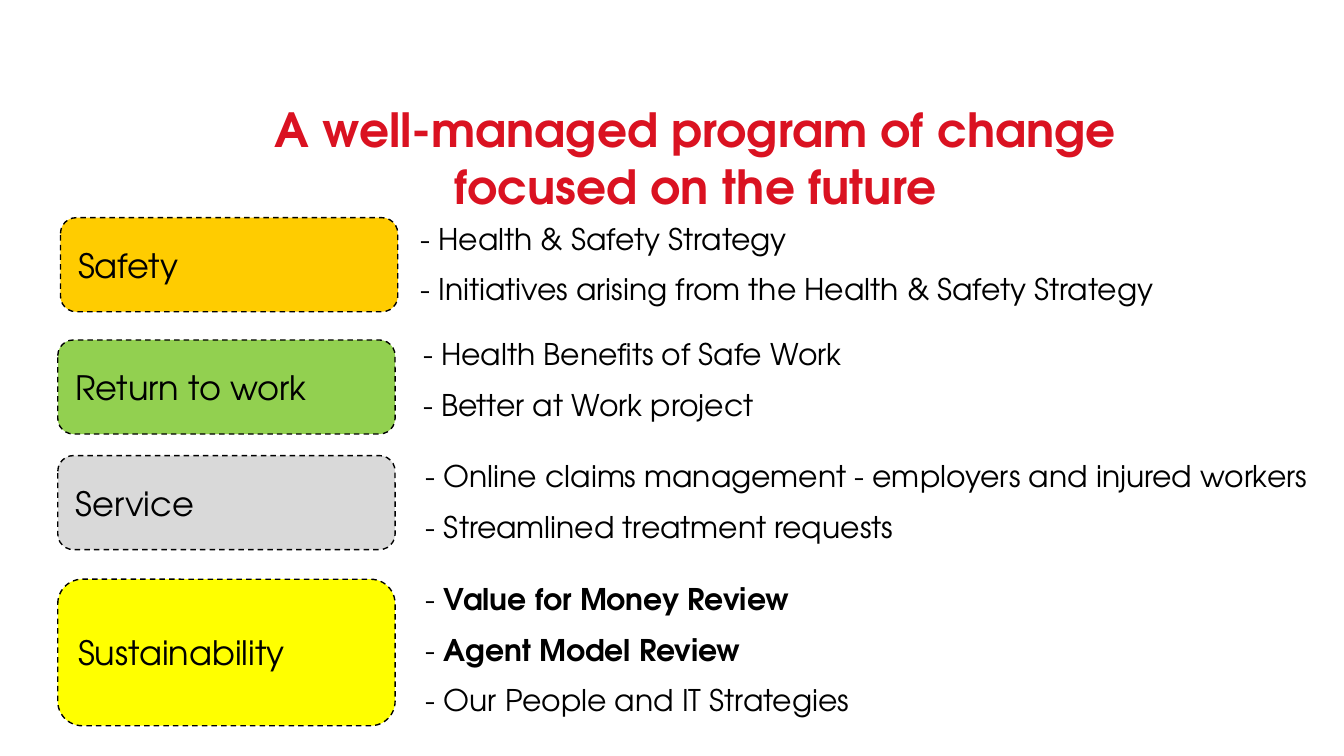
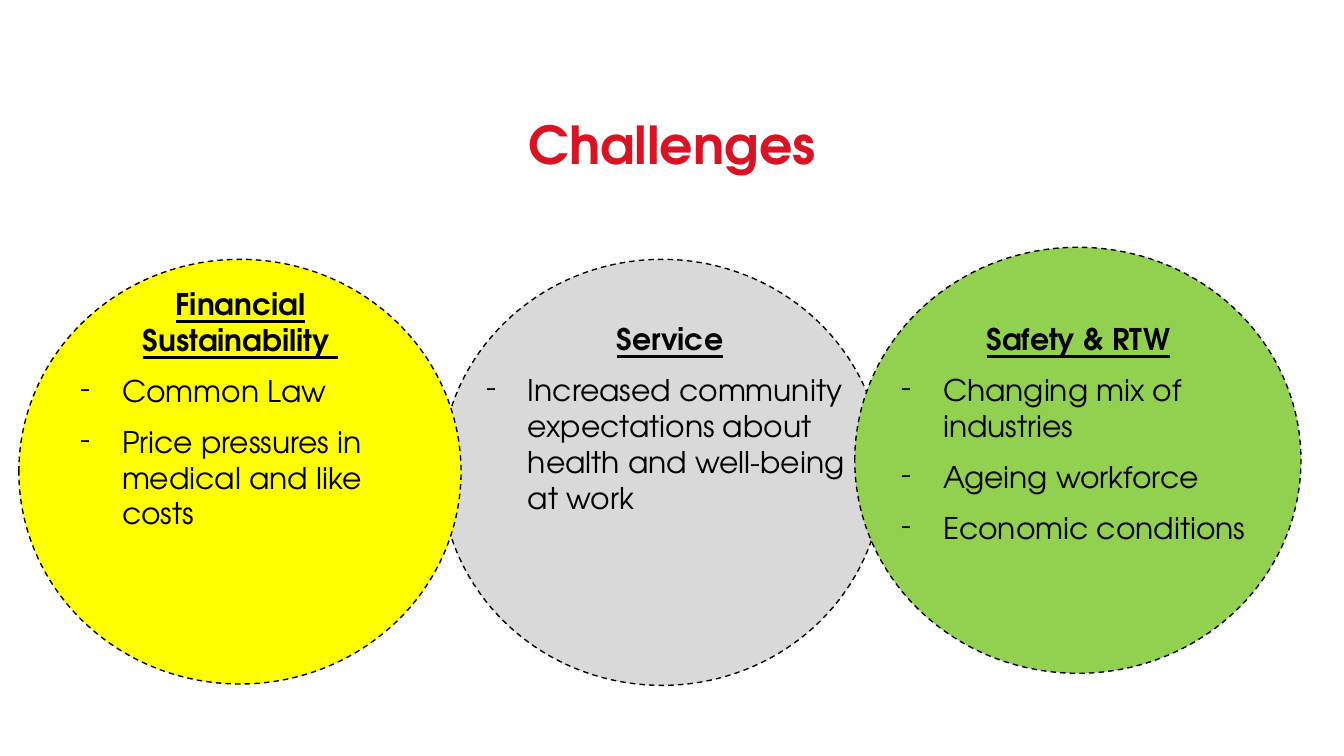
from lxml import etree
from pptx import Presentation
from pptx.dml.color import RGBColor
from pptx.enum.dml import MSO_LINE
from pptx.enum.shapes import MSO_SHAPE as SHAPE
from pptx.enum.text import MSO_ANCHOR as ANCHOR, MSO_AUTO_SIZE as AUTO, PP_ALIGN as ALIGN
from pptx.oxml.ns import qn
from pptx.util import Inches, Pt

FONT = "TeX Gyre Adventor"
COLORS = {
    "title": "DA1221",
    "text": "000000",
    "safety": "FFCC00",
    "work": "92D050",
    "service": "D9D9D9",
    "sustain": "FFFF00",
}
BODY_SIZE = 16
GAP = 8
HANG = 0.31

# label, colour, (left, top, height) of the box, (left, top, width, height) of the list, items
# An item that starts with * is bold after its dash.
THEMES = [
    ("Safety", "safety", (0.45, 1.62, 0.7), (3.03, 1.59, 6.9, 0.77),
     ["Health & Safety Strategy",
      "Initiatives arising from the Health & Safety Strategy"]),
    ("Return to work", "work", (0.43, 2.53, 0.7), (3.05, 2.45, 5.06, 0.77),
     ["Health Benefits of Safe Work", "Better at Work project"]),
    ("Service", "service", (0.43, 3.39, 0.7), (3.07, 3.36, 6.93, 0.77),
     ["Online claims management - employers and injured workers",
      "Streamlined treatment requests"]),
    ("Sustainability", "sustain", (0.43, 4.31, 1.09), (3.07, 4.27, 5.51, 1.18),
     ["*Value for Money Review", "*Agent Model Review",
      "Our People and IT Strategies"]),
]

# heading, colour, circle, text box, items; from back to front
CHALLENGES = [
    ("Service", "service", (3.28, 1.93, 3.29, 3.17), (3.52, 2.34, 2.93, 1.58),
     ["Increased community expectations about health and well-being at work"]),
    ("Financial Sustainability ", "sustain", (0.14, 1.93, 3.29, 3.16), (0.5, 2.08, 2.58, 1.99),
     ["Common Law", "Price pressures in medical and like costs"]),
    ("Safety & RTW", "work", (6.36, 1.84, 3.32, 3.17), (6.61, 2.34, 2.83, 1.85),
     ["Changing mix of industries", "Ageing workforce", "Economic conditions"]),
]


def rgb(name):
    return RGBColor.from_string(COLORS[name])


def add_run(p, text, size, color, bold, underline=False):
    r = p.add_run()
    r.text = text
    r.font.name = FONT
    r.font.size = Pt(size)
    r.font.bold = bold
    r.font.underline = underline
    r.font.color.rgb = rgb(color)


def add_bullet(p, char):
    pPr = p._p.get_or_add_pPr()
    pPr.set("marL", str(Inches(HANG)))
    pPr.set("indent", str(-Inches(HANG)))
    etree.SubElement(pPr, qn("a:buFont")).set("typeface", FONT)
    etree.SubElement(pPr, qn("a:buChar")).set("char", char)


def write(tf, text, size=BODY_SIZE, color="text", bold=False, underline=False,
          align=ALIGN.LEFT, lead="", bullet=None):
    """Add a paragraph; lead is plain text put before the formatted text."""
    p = tf.paragraphs[0]
    if p.runs:
        p = tf.add_paragraph()
        p.space_before = Pt(GAP)
    p.alignment = align
    if bullet:
        add_bullet(p, bullet)
    if lead:
        add_run(p, lead, size, color, False)
    add_run(p, text, size, color, bold, underline)


def add_box(s, box, anchor=ANCHOR.TOP, grow=True):
    tf = s.shapes.add_textbox(*map(Inches, box)).text_frame
    tf.word_wrap = True
    tf.vertical_anchor = anchor
    tf.auto_size = AUTO.SHAPE_TO_FIT_TEXT if grow else AUTO.NONE
    return tf


def add_title(s, text, box, size):
    tf = add_box(s, box, ANCHOR.MIDDLE, grow=False)
    write(tf, text, size=size, color="title", bold=True, align=ALIGN.CENTER)


def add_dashed(s, kind, box, color):
    sp = s.shapes.add_shape(kind, *map(Inches, box))
    sp.shadow.inherit = False
    sp.fill.solid()
    sp.fill.fore_color.rgb = rgb(color)
    sp.line.color.rgb = rgb("text")
    sp.line.width = Pt(0.75)
    sp.line.dash_style = MSO_LINE.DASH
    return sp


def add_theme(s, label, color, place, list_box, items):
    left, top, height = place
    sp = add_dashed(s, SHAPE.ROUNDED_RECTANGLE, (left, top, 2.51, height), color)
    sp.text_frame.vertical_anchor = ANCHOR.MIDDLE
    write(sp.text_frame, label, size=18)
    tf = add_box(s, list_box)
    for item in items:
        bold = item.startswith("*")
        write(tf, item.lstrip("*"), bold=bold, lead="- ")


def add_challenge_text(s, heading, box, items):
    tf = add_box(s, box)
    write(tf, heading, bold=True, underline=True, align=ALIGN.CENTER)
    for item in items:
        write(tf, item, bullet="-")


def main():
    prs = Presentation()
    prs.slide_width = Inches(10)
    prs.slide_height = prs.slide_width * 9 // 16
    blank = prs.slide_layouts[6]

    s = prs.slides.add_slide(blank)
    add_title(s, "A well-managed program of change focused on the future",
              (1.54, 0.7, 7.27, 0.94), 25.2)
    for theme in THEMES:
        add_theme(s, *theme)

    s = prs.slides.add_slide(blank)
    add_title(s, "Challenges", (0.5, 0.74, 9, 0.66), 28)
    for _, color, circle, _, _ in CHALLENGES:
        add_dashed(s, SHAPE.OVAL, circle, color)
    for heading, _, _, box, items in CHALLENGES:
        add_challenge_text(s, heading, box, items)

    prs.save("out.pptx")


if __name__ == "__main__":
    main()
